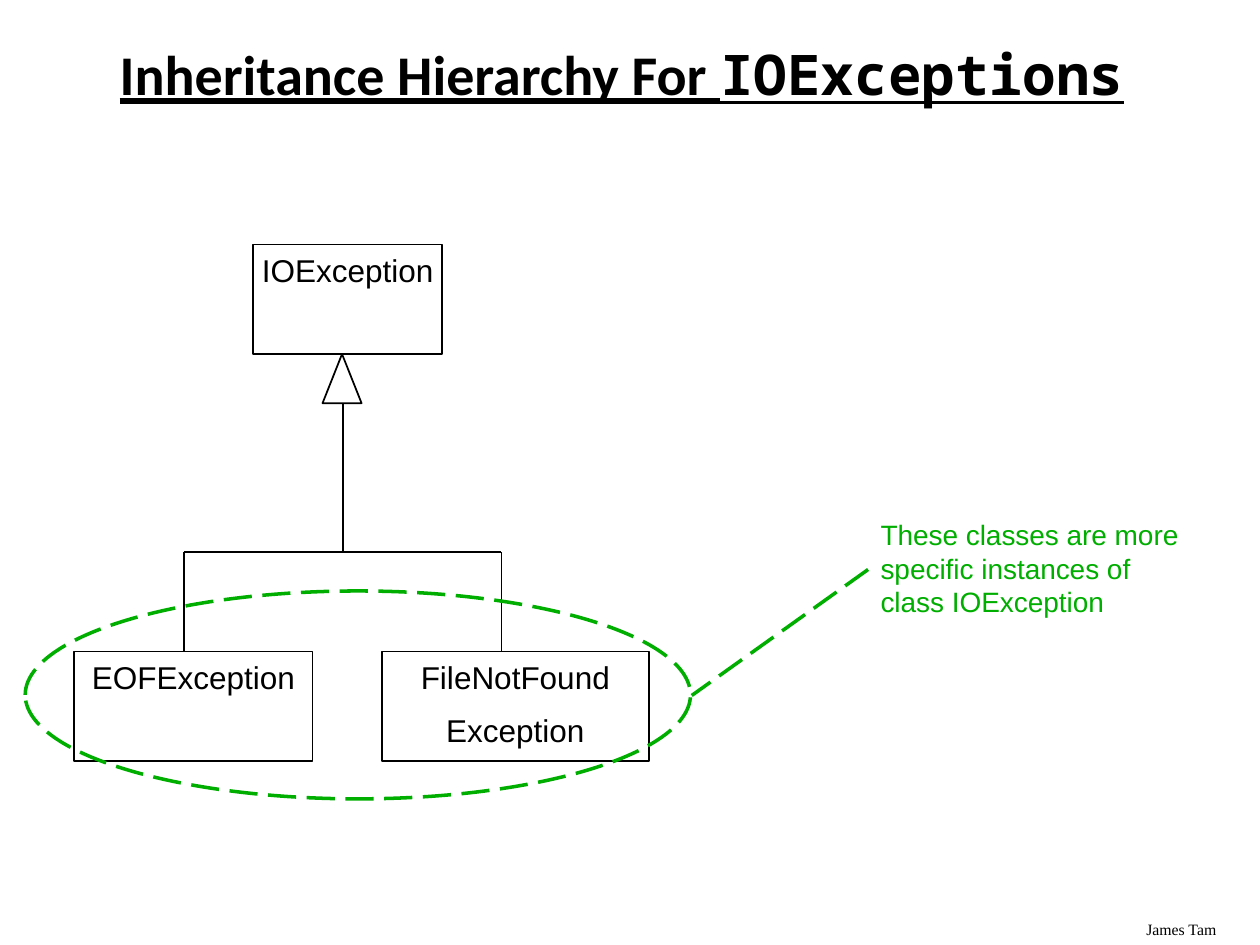
import pptx
import pptx.util
import pptx.dml.color
import pptx.enum.dml
import pptx.enum.shapes
import pptx.enum.text
import pptx.oxml.ns
import lxml.etree

Inches = pptx.util.Inches
Pt = pptx.util.Pt
SHAPES = pptx.enum.shapes.MSO_SHAPE
ALIGN = pptx.enum.text.PP_ALIGN
ANCHOR = pptx.enum.text.MSO_ANCHOR
DASH = pptx.enum.dml.MSO_LINE.LONG_DASH
BLACK = pptx.dml.color.RGBColor(0x00, 0x00, 0x00)
GREEN = pptx.dml.color.RGBColor(0x00, 0xAE, 0x00)


def write(box, text, font="Arial", size=18, color=BLACK, align=ALIGN.LEFT,
          bold=False, underline=False, spacing=None, anchor=ANCHOR.TOP, wrap=True):
    frame = box.text_frame
    frame.word_wrap = wrap
    frame.vertical_anchor = anchor
    for index, line in enumerate(text.split("\n")):
        para = frame.add_paragraph() if index else frame.paragraphs[-1]
        para.alignment = align
        para.line_spacing = spacing
        if index:
            para.space_before = Pt(size / 2)
        span = para.add_run()
        span.text = line
        span.font.name = font
        span.font.size = Pt(size)
        span.font.bold = bold
        span.font.underline = underline
        span.font.color.rgb = color


def outline(item, color=BLACK, width=1, dash=None):
    item.line.color.rgb = color
    item.line.width = Pt(width)
    if dash:
        item.line.dash_style = dash
    if isinstance(item, pptx.shapes.connector.Connector):
        lxml.etree.SubElement(item._element.spPr, pptx.oxml.ns.qn("a:effectLst"))
    else:
        item.fill.background()
        item.shadow.inherit = False


deck = pptx.Presentation()
deck.slide_width = Inches(10)
deck.slide_height = Inches(7.5)
page = deck.slides.add_slide(deck.slide_layouts[6])

author = page.shapes.add_textbox(Inches(9), Inches(7.25), Inches(1), Inches(0.25))
write(author, "James Tam", font="Times New Roman", size=9)

title = page.shapes.add_textbox(Inches(0.47), Inches(0.33), Inches(8.93), Inches(0.57))
for text, font in [("Inheritance Hierarchy For ", "Calibri"), ("IOExceptions", "Noto Sans Mono")]:
    write(title, text, font=font, size=32, align=ALIGN.CENTER, bold=True,
          underline=True, spacing=0.9, anchor=ANCHOR.MIDDLE)

classes = [
    ("IOException", 2.01, 1.94, 1.5),
    ("EOFException", 0.59, 5.17, 1.89),
    ("FileNotFound\nException", 3.03, 5.17, 2.12),
]
for name, left, top, width in classes:
    box = page.shapes.add_shape(SHAPES.RECTANGLE, Inches(left), Inches(top), Inches(width), Inches(0.87))
    outline(box)
    write(box, name, align=ALIGN.CENTER, wrap=False)

arrowhead = page.shapes.add_shape(SHAPES.ISOSCELES_TRIANGLE, Inches(2.56), Inches(2.81), Inches(0.31), Inches(0.39))
outline(arrowhead)

trunk, left_branch, right_branch = 2.72, 1.46, 3.98
fork, child_top = 4.38, 5.17
branches = [
    (left_branch, fork, left_branch, child_top),
    (left_branch, fork, right_branch, fork),
    (right_branch, fork, right_branch, child_top),
    (trunk, 3.2, trunk, fork),
]
for ends in branches:
    branch = page.shapes.add_connector(pptx.enum.shapes.MSO_CONNECTOR.STRAIGHT, *map(Inches, ends))
    outline(branch)

ring = page.shapes.add_shape(SHAPES.OVAL, Inches(0.2), Inches(4.69), Inches(5.28), Inches(1.65))
outline(ring, color=GREEN, width=2, dash=DASH)

note = page.shapes.add_textbox(Inches(6.89), Inches(4.06), Inches(2.68), Inches(1.17))
write(note, "These classes are more specific instances of class IOException", size=16, color=GREEN)

pointer = page.shapes.add_connector(
    pptx.enum.shapes.MSO_CONNECTOR.STRAIGHT, Inches(6.89), Inches(4.52), Inches(5.49), Inches(5.52))
outline(pointer, color=GREEN, width=2, dash=DASH)

deck.save("out.pptx")
